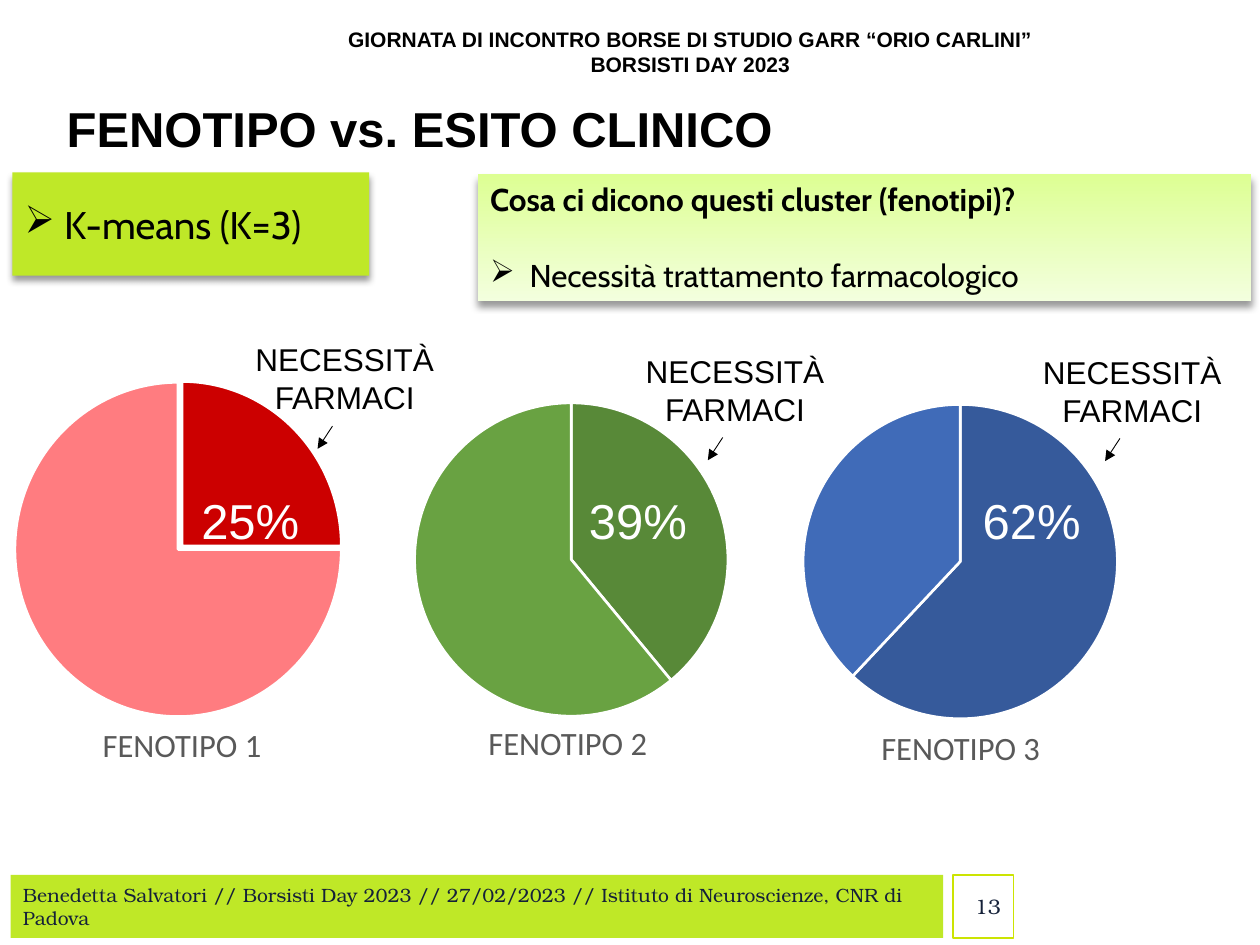
from lxml import etree
from pptx import Presentation
from pptx import util as u
from pptx.chart.data import CategoryChartData
from pptx.dml.color import RGBColor
from pptx.enum import chart as charts, shapes, text
from pptx.oxml import parse_xml
from pptx.oxml.ns import nsdecls, qn

COLORS = {
    "black": "000000", "white": "FFFFFF", "grey": "595959", "navy": "152139",
    "footer": "B4E402", "number_line": "CCE402", "lime": "BFE828",
    "pale_top": "DDFF93", "pale_bottom": "F3FFDE",
    "dark_red": "CC0000", "light_red": "FF7C80",
    "dark_green": "588938", "light_green": "69A242",
    "dark_blue": "365A9B", "light_blue": "406BB8",
}
HEADER = {"size": 12, "bold": True, "align": "CENTER"}
TITLE = {"size": 28, "bold": True}
FOOTER = {"size": 11, "name": "TeX Gyre Bonum", "color": "navy"}
NUMBER = {**FOOTER, "size": 12, "align": "RIGHT"}
METHOD = {"size": 22, "name": "Cabin", "bullet": True}
QUESTION = {"size": 18, "name": "Cabin", "bold": True}
ANSWER = {"size": 18, "name": "Cabin", "bullet": True, "before": 21.5}
PERCENT = {"size": 28, "color": "white", "align": "CENTER"}
CALLOUT = {"size": 18, "align": "CENTER"}
PHENOTYPE = {"size": 18.6, "name": "Calibri", "color": "grey", "align": "CENTER"}


def rgb(name):
    return RGBColor.from_string(COLORS[name])


class SlideBuilder:
    def __init__(self, slide):
        self.slide = slide

    def set_text(self, shape, lines, anchor="TOP", wrap=True):
        """Fill a shape with (text, style) lines."""
        frame = shape.text_frame
        frame.word_wrap = wrap
        frame.vertical_anchor = getattr(text.MSO_ANCHOR, anchor)
        for index, (words, style) in enumerate(lines):
            paragraph = frame.paragraphs[0] if index == 0 else frame.add_paragraph()
            paragraph.text = words
            paragraph.alignment = getattr(text.PP_ALIGN, style.get("align", "LEFT"))
            paragraph.space_before = u.Pt(style.get("before", 0))
            if style.get("bullet"):
                properties = paragraph._p.get_or_add_pPr()
                properties.set("marL", str(u.Pt(22.5)))
                properties.set("indent", str(u.Pt(-22.5)))
                etree.SubElement(properties, qn("a:buChar"), char="➢")
            font = paragraph.font
            values = {"size": u.Pt(style["size"]), "name": style.get("name", "Arial"),
                      "bold": style.get("bold", False)}
            for key, value in values.items():
                setattr(font, key, value)
            font.color.rgb = rgb(style.get("color", "black"))

    def title(self, words, box, style):
        shape = self.slide.shapes.title
        for key, value in zip(("left", "top", "width", "height"), box):
            setattr(shape, key, u.Pt(value))
        self.set_text(shape, [(words, style)], "MIDDLE")
        frame = shape.text_frame
        frame.paragraphs[0].line_spacing = 0.9
        margins = {"margin_left": 39.6, "margin_right": 28, "margin_top": 3, "margin_bottom": 3}
        for key, value in margins.items():
            setattr(frame, key, u.Pt(value))

    def label(self, lines, box, wrap=True):
        self.set_text(self.slide.shapes.add_textbox(*map(u.Pt, box)), lines, wrap=wrap)

    def panel(self, box, fill, line=None, line_width=0.75, kind="RECTANGLE",
              shadow=False, alpha=None):
        shape = self.slide.shapes.add_shape(
            getattr(shapes.MSO_SHAPE, kind), *map(u.Pt, box))
        shape.shadow.inherit = False
        if isinstance(fill, tuple):
            shape.fill.gradient()
            shape.fill.gradient_angle = 270
            for stop, name in zip(shape.fill.gradient_stops, fill):
                stop.color.rgb = rgb(name)
        else:
            shape.fill.solid()
            shape.fill.fore_color.rgb = rgb(fill)
        if line:
            shape.line.color.rgb = rgb(line)
            shape.line.width = u.Pt(line_width)
        else:
            shape.line.fill.background()
        properties = shape._element.spPr
        if alpha:
            color = properties.find(qn("a:solidFill"))[0]
            etree.SubElement(color, qn("a:alpha"), val=str(alpha * 1000))
        if shadow:
            properties.find(qn("a:effectLst")).append(parse_xml(
                f'<a:outerShdw {nsdecls("a")} blurRad="{u.Pt(4)}" dist="{u.Pt(3)}" '
                'dir="5400000" rotWithShape="0"><a:srgbClr val="000000">'
                '<a:alpha val="40000"/></a:srgbClr></a:outerShdw>'))
        return shape

    def pie_chart(self, values, fills, box, layout):
        data = CategoryChartData()
        data.categories = ["1", "2"]
        data.add_series("Series 1", values)
        chart = self.slide.shapes.add_chart(
            charts.XL_CHART_TYPE.PIE, *map(u.Pt, box), data).chart
        chart.has_title = chart.has_legend = False
        chart.font.name, chart.font.size = "Calibri", u.Pt(10)
        chart.font.color.rgb = rgb("black")
        plot = chart.plots[0]
        plot.vary_by_categories = True
        for index, name in enumerate(fills):
            style = plot.series[0].points[index].format
            style.fill.solid()
            style.fill.fore_color.rgb = rgb(name)
            style.line.color.rgb = rgb("white")
            style.line.width = u.Pt(1.5)
        # Fixed position of the pie inside the chart
        area = chart._chartSpace.chart.plotArea
        for old in area.findall(qn("c:layout")):
            area.remove(old)
        sizes = "".join(f'<c:{key} val="{value}"/>' for key, value in zip("xywh", layout))
        area.insert(0, parse_xml(
            f'<c:layout {nsdecls("c")}><c:manualLayout><c:layoutTarget val="inner"/>'
            f'<c:xMode val="edge"/><c:yMode val="edge"/>{sizes}</c:manualLayout></c:layout>'))

    def arrow(self, *ends):
        line = self.slide.shapes.add_connector(
            shapes.MSO_CONNECTOR.STRAIGHT, *map(u.Pt, ends))
        line.line.color.rgb = rgb("black")
        line.line.width = u.Pt(0.5)
        etree.SubElement(line.line._get_or_add_ln(), qn("a:tailEnd"), type="triangle")
        etree.SubElement(line._element.spPr, qn("a:effectLst"))


def main():
    presentation = Presentation()
    presentation.slide_width, presentation.slide_height = u.Pt(720), u.Pt(540)
    builder = SlideBuilder(presentation.slides.add_slide(presentation.slide_layouts[5]))

    # Header, title and footer
    builder.label([("GIORNATA DI INCONTRO BORSE DI STUDIO GARR “ORIO CARLINI”", HEADER),
                   ("BORSISTI DAY 2023", HEADER)], (184, 11.5, 421, 36), wrap=False)
    builder.title("FENOTIPO vs. ESITO CLINICO", (-1.5, 57.5, 720, 36), TITLE)
    footer = builder.panel((6, 500, 533, 36), "footer", alpha=85)
    builder.set_text(footer, [("Benedetta Salvatori // Borsisti Day 2023 // 27/02/2023 // "
                               "Istituto di Neuroscienze, CNR di Padova", FOOTER)], "MIDDLE")
    number = builder.panel((544.5, 500, 34.5, 36), "white", "number_line")
    builder.set_text(number, [("13", NUMBER)], "MIDDLE")

    # Method and question boxes
    method = builder.panel((7, 98.5, 204, 59), "lime", shadow=True)
    builder.set_text(method, [("K-means (K=3)", METHOD)], "MIDDLE")
    question = builder.panel((273, 99.5, 442, 72.5), ("pale_top", "pale_bottom"), shadow=True)
    builder.set_text(question, [("Cosa ci dicono questi cluster (fenotipi)?", QUESTION),
                                ("Necessità trattamento farmacologico", ANSWER)])

    # Pies of phenotypes 3 and 2
    builder.pie_chart((62, 38), ("dark_blue", "light_blue"), (376, 177, 345.5, 244),
                      (0.24, 0.22, 0.52, 0.74))
    builder.pie_chart((39, 61), ("dark_green", "light_green"), (155.5, 177, 338.5, 242),
                      (0.24, 0.22, 0.53, 0.74))

    # Pie of phenotype 1, from two sectors
    quarter = builder.panel((10, 221, 188, 182), "dark_red", "white", 1.5, "PIE")
    quarter.rotation = 90
    quarter.adjustments[0], quarter.adjustments[1] = 108, 162
    rest = builder.panel((8.5, 218.5, 186.5, 191), "light_red", "white", 1.5, "PIE")
    rest.adjustments[0], rest.adjustments[1] = 0, 162

    # Percentage, phenotype name and callout of each pie
    pies = [("25%", (101.5, 83), (21.5, 410.5, 165), (114.5, 191)),
            ("39%", (326, 77), (247, 409.5, 155), (337.5, 197.5)),
            ("62%", (535.5, 108), (471.5, 412.5, 155), (564.5, 198))]
    for order, (share, (share_left, share_width), name_box, (left, top)) in enumerate(pies, 1):
        builder.label([(share, PERCENT)], (share_left, 276.5, share_width, 41))
        builder.label([(f"FENOTIPO {order}", PHENOTYPE)], (*name_box, 29.5))
        builder.label([("NECESSITÀ FARMACI", CALLOUT)], (left, top, 165, 51))
        builder.arrow(left + 75.5, top + 52.5, left + 67, top + 65.5)

    presentation.save("out.pptx")


if __name__ == "__main__":
    main()
